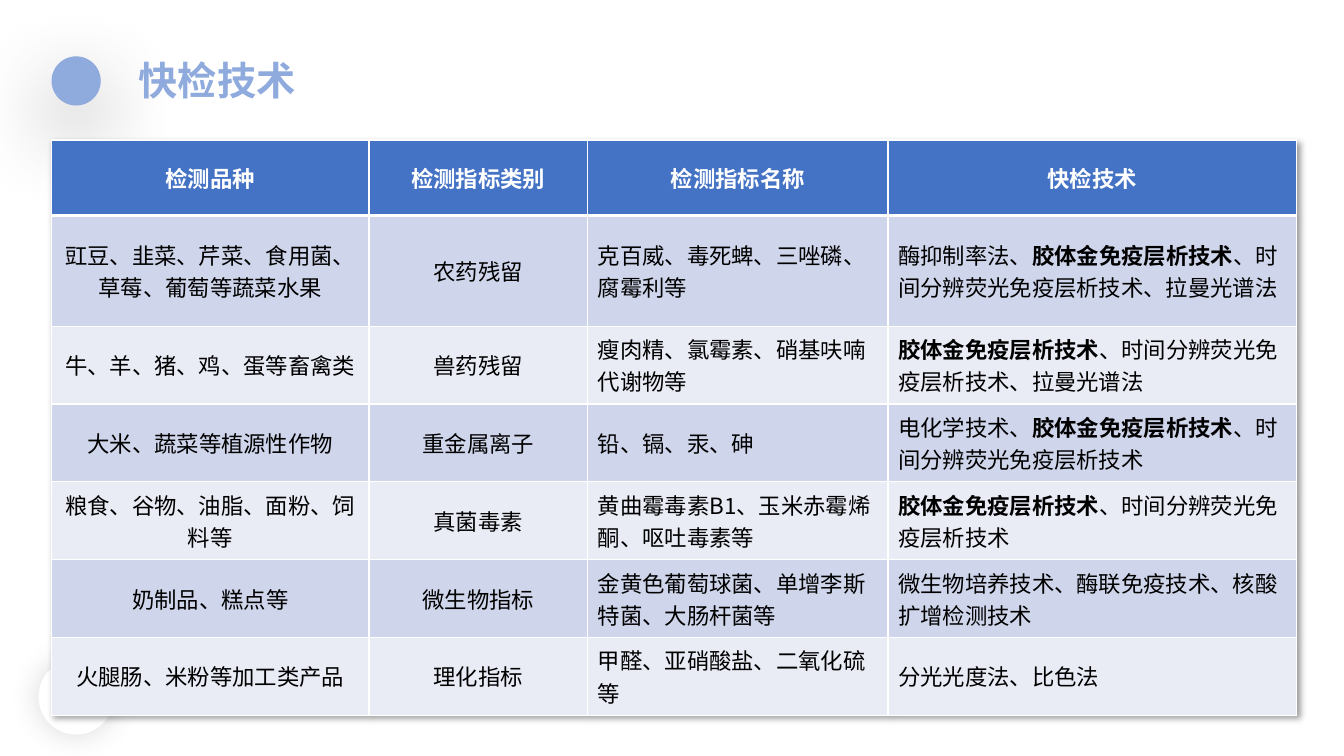
from lxml import etree
from pptx import Presentation
from pptx.dml.color import RGBColor
from pptx.enum.shapes import MSO_SHAPE
from pptx.enum.text import MSO_ANCHOR, MSO_AUTO_SIZE, PP_ALIGN
from pptx.oxml.ns import qn
from pptx.util import Cm, Pt

OVAL = MSO_SHAPE.OVAL
MIDDLE = MSO_ANCHOR.MIDDLE
GROW = MSO_AUTO_SIZE.SHAPE_TO_FIT_TEXT
LEFT, CENTER = PP_ALIGN.LEFT, PP_ALIGN.CENTER

WHITE = RGBColor(0xFF, 0xFF, 0xFF)
BLACK = RGBColor(0x00, 0x00, 0x00)
ACCENT = RGBColor(0x8F, 0xAA, 0xDC)
HEADER_BLUE = RGBColor(0x44, 0x72, 0xC4)
BANDS = (RGBColor(0xCF, 0xD5, 0xEA), RGBColor(0xE9, 0xEB, 0xF5))

KEY_METHOD = "胶体金免疫层析技术"
HEADINGS = ("检测品种", "检测指标类别", "检测指标名称", "快检技术")
TESTS = (
    ("豇豆、韭菜、芹菜、食用菌、草莓、葡萄等蔬菜水果", "农药残留",
     "克百威、毒死蜱、三唑磷、腐霉利等",
     "酶抑制率法、胶体金免疫层析技术、时间分辨荧光免疫层析技术、拉曼光谱法"),
    ("牛、羊、猪、鸡、蛋等畜禽类", "兽药残留",
     "瘦肉精、氯霉素、硝基呋喃代谢物等",
     "胶体金免疫层析技术、时间分辨荧光免疫层析技术、拉曼光谱法"),
    ("大米、蔬菜等植源性作物", "重金属离子",
     "铅、镉、汞、砷",
     "电化学技术、胶体金免疫层析技术、时间分辨荧光免疫层析技术"),
    ("粮食、谷物、油脂、面粉、饲料等", "真菌毒素",
     "黄曲霉毒素B1、玉米赤霉烯酮、呕吐毒素等",
     "胶体金免疫层析技术、时间分辨荧光免疫层析技术"),
    ("奶制品、糕点等", "微生物指标",
     "金黄色葡萄球菌、单增李斯特菌、大肠杆菌等",
     "微生物培养技术、酶联免疫技术、核酸扩增检测技术"),
    ("火腿肠、米粉等加工类产品", "理化指标",
     "甲醛、亚硝酸盐、二氧化硫等",
     "分光光度法、比色法"),
)
COLUMN_WIDTHS = (8, 5.51, 7.57, 10.29)
ROW_HEIGHTS = (1.9, 2.79) + (1.96,) * 5


class SlideBuilder:
    font = "Noto Sans CJK SC"
    title_size = Pt(28)
    cell_size = Pt(16)
    border = Pt(1)
    header_rule = Pt(3)

    def __init__(self, slide):
        self.slide = slide

    def add_run(self, paragraph, text, size, color, bold):
        run = paragraph.add_run()
        run.text = text
        font = run.font
        font.name, font.size, font.bold = self.font, size, bold
        font.color.rgb = color
        east_asian = etree.SubElement(font._element, qn("a:ea"))
        east_asian.set("typeface", self.font)

    def shadow(self, alpha, blur, distance, angle):
        """Return an effect list with one black outer shadow (percent, points, degrees)."""
        effects = etree.Element(qn("a:effectLst"))
        outer = etree.SubElement(
            effects, qn("a:outerShdw"), blurRad=str(Pt(blur)), dist=str(Pt(distance)),
            dir=str(angle * 60000), algn="ctr", rotWithShape="0")
        black = etree.SubElement(outer, qn("a:srgbClr"), val=str(BLACK))
        etree.SubElement(black, qn("a:alpha"), val=str(alpha * 1000))
        return effects

    def disc(self, left, top, diameter, color, shadow):
        disc = self.slide.shapes.add_shape(
            OVAL, Cm(left), Cm(top), Cm(diameter), Cm(diameter))
        disc.fill.solid()
        disc.fill.fore_color.rgb = color
        disc.line.fill.background()
        disc._element.spPr.append(shadow)

    def title(self, left, top, width, height, text):
        box = self.slide.shapes.add_textbox(Cm(left), Cm(top), Cm(width), Cm(height))
        frame = box.text_frame
        frame.word_wrap = True
        frame.auto_size = GROW
        frame.vertical_anchor = MIDDLE
        self.add_run(frame.paragraphs[0], text, self.title_size, ACCENT, True)

    def cell_borders(self, cell, top, bottom):
        properties = cell._tc.get_or_add_tcPr()
        widths = {"L": self.border, "R": self.border, "T": top, "B": bottom}
        for position, (side, width) in enumerate(widths.items()):
            line = etree.Element(qn(f"a:ln{side}"), w=str(width))
            fill = etree.SubElement(line, qn("a:solidFill"))
            etree.SubElement(fill, qn("a:srgbClr"), val=str(WHITE))
            properties.insert(position, line)

    def fill_cell(self, cell, text, row, column):
        is_header = row == 0
        cell.vertical_anchor = MIDDLE
        cell.fill.solid()
        cell.fill.fore_color.rgb = HEADER_BLUE if is_header else BANDS[(row - 1) % 2]
        self.cell_borders(cell,
                          top=self.header_rule if row == 1 else self.border,
                          bottom=self.header_rule if is_header else self.border)
        paragraph = cell.text_frame.paragraphs[0]
        paragraph.alignment = CENTER if is_header or column < 2 else LEFT
        color = WHITE if is_header else BLACK
        for part in filter(None, text.partition(KEY_METHOD)):
            self.add_run(paragraph, part, self.cell_size, color,
                         is_header or part == KEY_METHOD)

    def table(self, left, top, widths, heights, rows, shadow):
        table = self.slide.shapes.add_table(
            len(heights), len(widths), Cm(left), Cm(top),
            Cm(sum(widths)), Cm(sum(heights))).table
        table._tbl.tblPr.insert(0, shadow)
        for column, width in zip(table.columns, widths):
            column.width = Cm(width)
        for row, height in zip(table.rows, heights):
            row.height = Cm(height)
        for r, texts in enumerate(rows):
            for c, text in enumerate(texts):
                self.fill_cell(table.cell(r, c), text, r, c)


def main():
    presentation = Presentation()
    presentation.slide_width, presentation.slide_height = Cm(33.87), Cm(19.05)
    builder = SlideBuilder(presentation.slides.add_slide(presentation.slide_layouts[6]))
    builder.disc(1.3, 1.42, 1.24, ACCENT, builder.shadow(40, 60, 20, 90))
    builder.title(3.25, 1.3, 9.04, 1.45, "快检技术")
    builder.disc(0.97, 16.61, 1.9, WHITE, builder.shadow(15, 22, 0, 0))
    builder.table(1.3, 3.53, COLUMN_WIDTHS, ROW_HEIGHTS, (HEADINGS,) + TESTS,
                  builder.shadow(40, 4, 3, 45))
    presentation.save("out.pptx")


if __name__ == "__main__":
    main()
